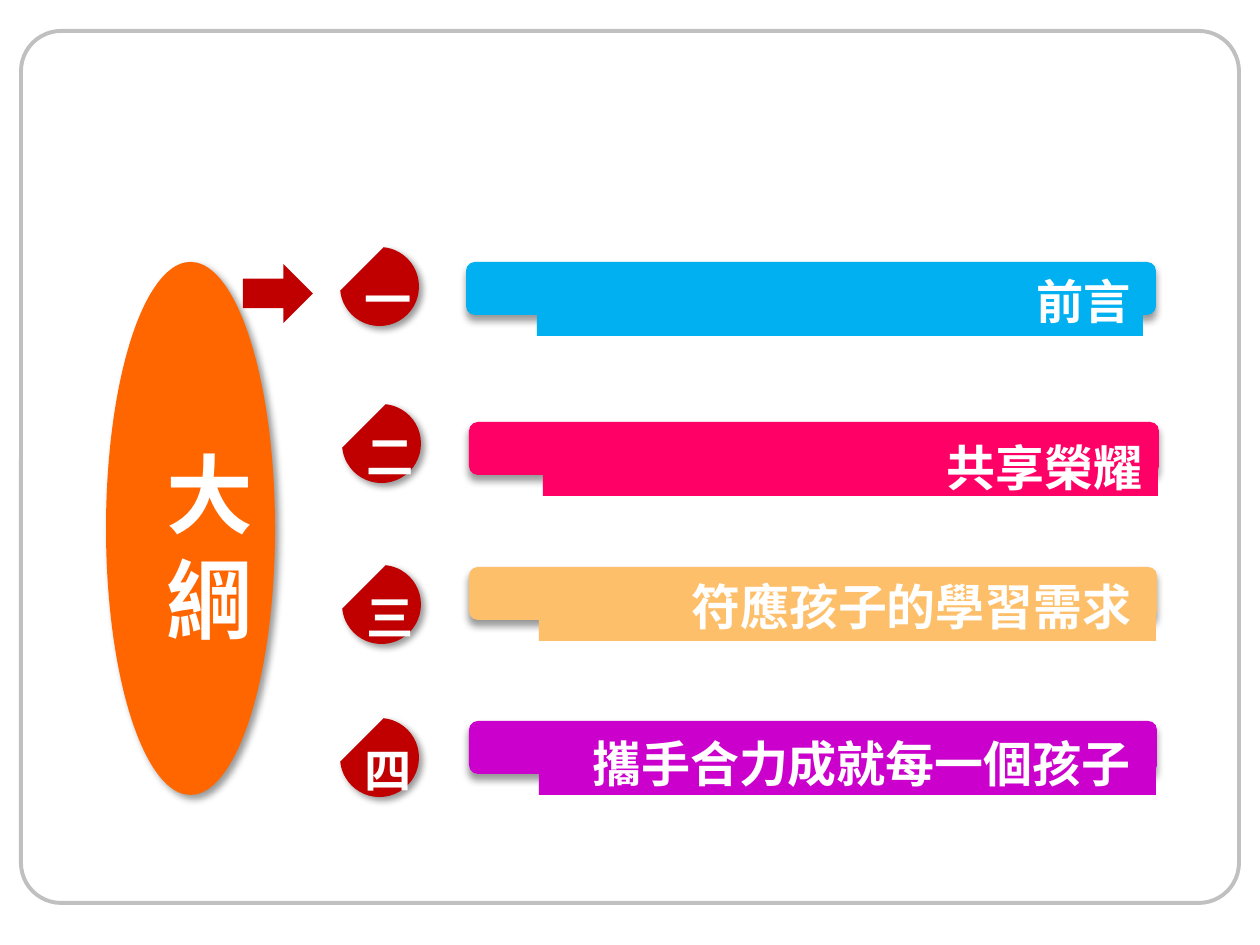
from lxml import etree
from pptx import Presentation
from pptx.dml.color import RGBColor
from pptx.enum.shapes import MSO_SHAPE
from pptx.enum.text import MSO_ANCHOR, PP_ALIGN
from pptx.oxml.ns import qn
from pptx.util import Pt

EMU_PER_PX = 914400 // 126
FONT = "Noto Sans CJK SC"
RIGHT, CENTER = PP_ALIGN.RIGHT, PP_ALIGN.CENTER
MIDDLE = MSO_ANCHOR.MIDDLE
ROUNDED, RECTANGLE = MSO_SHAPE.ROUNDED_RECTANGLE, MSO_SHAPE.RECTANGLE
OVAL, CHORD, ARROW = MSO_SHAPE.OVAL, MSO_SHAPE.CHORD, MSO_SHAPE.RIGHT_ARROW

WHITE = RGBColor(0xFF, 0xFF, 0xFF)
SILVER = RGBColor(0xC0, 0xC0, 0xC0)
ORANGE = RGBColor(0xFF, 0x66, 0x00)
RED = RGBColor(0xC0, 0x00, 0x00)
BLUE = RGBColor(0x00, 0xB0, 0xF0)
PINK = RGBColor(0xFF, 0x00, 0x66)
SAND = RGBColor(0xFE, 0xBF, 0x6A)
PURPLE = RGBColor(0xCC, 0x00, 0xCC)

BARS = [
    (466, 262, 690, 537, 606, BLUE),
    (469, 422, 690, 543, 615, PINK),
    (469, 567, 688, 539, 617, SAND),
    (469, 721, 688, 539, 617, PURPLE),
]
BADGES = [("一", 340, 247), ("二", 342, 404), ("三", 342, 565), ("四", 340, 718)]
TITLES = [
    ("共享榮耀", 932, 431, 223),
    ("符應孩子的學習需求", 673, 570, 471),
    ("攜手合力成就每一個孩子", 573, 727, 570),
]
BADGE_SIZE = 79
CHORD_START, CHORD_END = 276, 174
DEGREE = 0.6


def px(*lengths):
    return [length * EMU_PER_PX for length in lengths]


def add_shadow(shape, direction):
    effects = shape._element.spPr.find(qn("a:effectLst"))
    shadow = etree.SubElement(
        effects, qn("a:outerShdw"), blurRad=str(Pt(4)), dist=str(Pt(3)),
        dir=str(direction * 60000), algn="ctr", rotWithShape="0")
    color = etree.SubElement(shadow, qn("a:srgbClr"), val="000000")
    etree.SubElement(color, qn("a:alpha"), val="40000")


def add_shape(shapes, kind, box, fill, shadow=None):
    shape = shapes.add_shape(kind, *px(*box))
    shape.shadow.inherit = False
    shape.fill.solid()
    shape.fill.fore_color.rgb = fill
    shape.line.fill.background()
    if shadow is not None:
        add_shadow(shape, shadow)
    return shape


def write_text(shape, text, size=27, align=RIGHT, wrap=True, spacing=None):
    frame = shape.text_frame
    frame.word_wrap = wrap
    frame.vertical_anchor = MIDDLE
    frame.margin_top = frame.margin_bottom = 0
    paragraph = frame.paragraphs[0]
    paragraph.alignment = align
    if spacing:
        paragraph.line_spacing = Pt(spacing)
    run = paragraph.add_run()
    run.text = text
    run.font.size = Pt(size)
    run.font.bold = True
    run.font.color.rgb = WHITE
    run.font.name = FONT
    etree.SubElement(run.font._element, qn("a:ea"), typeface=FONT)


def add_frame(shapes):
    frame = add_shape(shapes, ROUNDED, (21, 31, 1218, 872), WHITE)
    frame.adjustments[0] = 0.046
    frame.fill.background()
    frame.line.color.rgb = SILVER
    frame.line.width = Pt(2.25)


def add_heading(shapes):
    group = shapes.add_group_shape().shapes
    add_shape(group, OVAL, (106, 262, 169, 533), ORANGE, shadow=45)
    label = add_shape(group, RECTANGLE, (154, 433, 96, 223), ORANGE)
    write_text(label, "大綱", size=49.5, align=CENTER, spacing=60)


def add_bar(shapes, left, top, width, body_left, body_width, color):
    group = shapes.add_group_shape().shapes
    add_shape(group, ROUNDED, (left, top, width, 53), color, shadow=90)
    return add_shape(group, RECTANGLE, (body_left, top + 4, body_width, 70), color)


def add_badge(shapes, numeral, left, top):
    group = shapes.add_group_shape().shapes
    disc = add_shape(group, CHORD, (left, top, BADGE_SIZE, BADGE_SIZE), RED, shadow=45)
    disc.adjustments[0] = CHORD_START * DEGREE
    disc.adjustments[1] = CHORD_END * DEGREE
    label = group.add_textbox(*px(left + 12, top + 17, 69, 70))
    write_text(label, numeral)


def add_title(shapes, text, left, top, width):
    title = shapes.add_textbox(*px(left, top, width, 72))
    write_text(title, text, size=28, wrap=False)


def main():
    presentation = Presentation()
    presentation.slide_width, presentation.slide_height = px(1260, 945)
    slide = presentation.slides.add_slide(presentation.slide_layouts[6])
    shapes = slide.shapes
    add_frame(shapes)
    add_heading(shapes)
    bars = [add_bar(shapes, *bar) for bar in BARS]
    write_text(bars[0], "前言")
    add_shape(shapes, ARROW, (243, 264, 70, 59), RED)
    for badge in BADGES:
        add_badge(shapes, *badge)
    for title in TITLES:
        add_title(shapes, *title)
    presentation.save("out.pptx")


if __name__ == "__main__":
    main()
